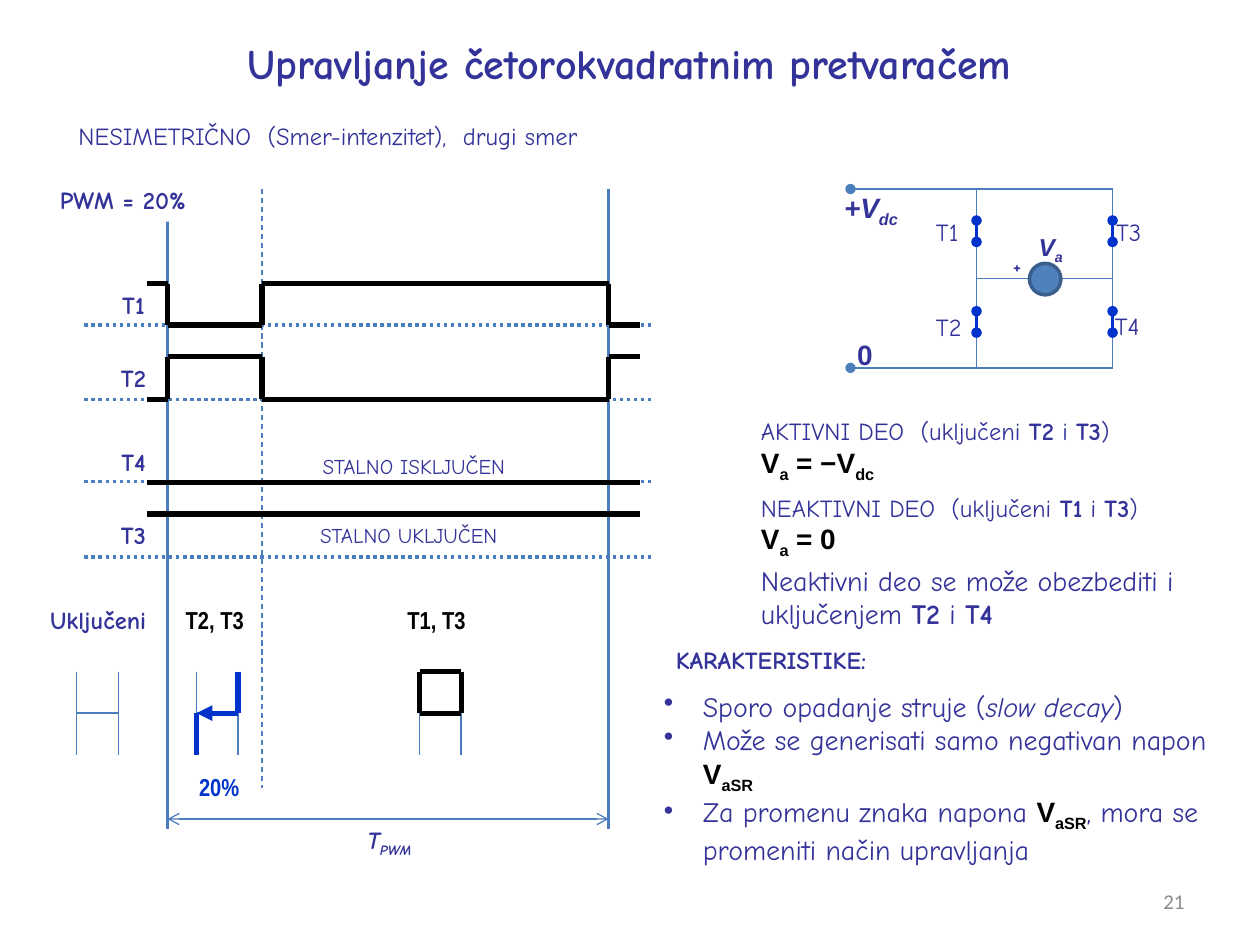
from pptx import Presentation
from pptx.dml.color import RGBColor
from pptx.enum.dml import MSO_LINE
from pptx.enum.shapes import MSO_CONNECTOR, MSO_SHAPE
from pptx.enum.text import MSO_ANCHOR, MSO_AUTO_SIZE, PP_ALIGN
from pptx.oxml.ns import qn
from pptx.util import Inches, Pt
from lxml.etree import SubElement

COLORS = {"navy": "333399", "line": "4B7EBC", "black": "000000", "blue": "0033CC",
          "motor": "4F81BD", "rim": "3A5F8C", "gray": "8C8C8C", "white": "FFFFFF"}

# name: font, colour, bold, italic, subscript
STYLES = {
    "plain": ("Comic Neue", "navy", False, False, False),
    "bold": ("Comic Neue", "navy", True, False, False),
    "slant": ("Comic Neue", "navy", False, True, False),
    "period": ("Comic Neue", "navy", True, True, False),
    "period_sub": ("Comic Neue", "navy", True, True, True),
    "volt": ("Arial", "navy", True, True, False),
    "volt_sub": ("Arial", "navy", True, True, True),
    "zero": ("Arial", "navy", True, False, False),
    "math": ("Arial", "black", True, False, False),
    "sub": ("Arial", "black", True, False, True),
    "narrow": ("Arial Narrow", "black", True, False, False),
    "duty": ("Arial Narrow", "blue", True, False, False),
    "number": ("Calibri", "gray", False, False, False),
}

TITLE = "Upravljanje četorokvadratnim pretvaračem"

LABELS = [
    ("NESIMETRIČNO  (Smer-intenzitet),  drugi smer", "plain", 14, (0.25, 0.91, 4.71, 0.34)),
    ("PWM = 20%", "bold", 14, (0.29, 1.42, 1.37, 0.34)),
    ("Uključeni", "bold", 14, (0.25, 4.75, 1.06, 0.34)),
    ("T2, T3", "narrow", 14, (1.37, 4.75, 0.67, 0.34)),
    ("T1, T3", "narrow", 14, (3.13, 4.75, 0.67, 0.34)),
    ("20%", "duty", 14, (1.48, 6.08, 0.52, 0.34)),
    ("STALNO ISKLJUČEN", "plain", 12, (2.31, 3.55, 1.95, 0.3)),
    ("STALNO UKLJUČEN", "plain", 12, (2.31, 4.1, 1.87, 0.3)),
    ("KARAKTERISTIKE:", "bold", 14, (5.08, 5.07, 2.08, 0.34)),
    ("0", "zero", 16, (6.7, 2.63, 0.33, 0.37)),
]
SYMBOLS = [
    ([("T", "period"), ("PWM ", "period_sub")], 14, (2.75, 6.5, 0.72, 0.34)),
    ([("+V", "volt"), ("dc ", "volt_sub")], 16, (6.58, 1.46, 0.7, 0.37)),
    ([("V", "volt"), ("a ", "volt_sub")], 14, (8.13, 1.79, 0.45, 0.34)),
]
SWITCH_NAMES = [("T1", 14, 7.33, 1.67), ("T2", 14, 7.33, 2.43), ("T3", 14, 8.76, 1.67),
                ("T4", 14, 8.75, 2.42)]

NOTES = [
    ((5.94, 3.25, 3.39, 0.61), [
        (14, [("AKTIVNI DEO  (uključeni ", "plain"), ("T2", "bold"), (" i ", "plain"),
              ("T3", "bold"), (")", "plain")]),
        (16, [("V", "math"), ("a", "sub"), (" = −V", "math"), ("dc", "sub")])]),
    ((5.94, 3.86, 3.68, 0.61), [
        (14, [("NEAKTIVNI DEO  (uključeni ", "plain"), ("T1", "bold"), (" i ", "plain"),
              ("T3", "bold"), (")", "plain")]),
        (16, [("V", "math"), ("a", "sub"), (" = 0", "math")])]),
    ((5.94, 4.42, 3.84, 0.64), [
        (16, [("Neaktivni deo se može obezbediti i", "plain")]),
        (16, [("uključenjem ", "plain"), ("T2", "bold"), (" i ", "plain"), ("T4", "bold")])]),
]
FEATURES = [
    (16, [("Sporo opadanje struje (", "plain"), ("slow decay", "slant"), (")", "plain")]),
    (16, [("Može se generisati samo negativan napon ", "plain"), ("V", "math"), ("aSR", "sub")]),
    (16, [("Za promenu znaka napona ", "plain"), ("V", "math"), ("aSR", "sub"),
          (", mora se promeniti način upravljanja", "plain")]),
]

# name, label top, axis height, level in each interval
EDGES = [1.17, 1.33, 2.08, 4.83, 5.08]
SIGNALS = [
    ("T1", 2.25, 2.58, [2.25, 2.58, 2.25, 2.58]),
    ("T2", 2.83, 3.17, [3.17, 2.83, 3.17, 2.83]),
    ("T4", 3.5, 3.82, [3.83] * 4),
    ("T3", 4.08, 4.42, [4.08] * 4),
]
BRIDGE_LEFTS = [0.61, 1.56, 3.33]
BRIDGE_TOP, BRIDGE_SIDE = 5.33, 0.33
RAILS, LEGS = (1.5, 2.92), (7.75, 8.83)


def rgb(name):
    return RGBColor.from_string(COLORS[name])


def add_line(s, x1, y1, x2, y2, color="line", width=0.75, dash=None, head=None, tail=None):
    c = s.shapes.add_connector(MSO_CONNECTOR.STRAIGHT, *map(Inches, (x1, y1, x2, y2)))
    c.line.color.rgb = rgb(color)
    c.line.width = Pt(width)
    if dash:
        c.line.dash_style = dash
    ln = c.line._get_or_add_ln()
    for tag, kind in (("a:headEnd", head), ("a:tailEnd", tail)):
        if kind:
            SubElement(ln, qn(tag), type=kind)
    SubElement(c._element.spPr, qn("a:effectLst"))


def style_font(font, style, size):
    font.name, color, font.bold, font.italic, _ = STYLES[style]
    font.size = Pt(size)
    font.color.rgb = rgb(color)


def fill_text(tf, paras, align=PP_ALIGN.LEFT, wrap=False):
    tf.word_wrap = wrap
    tf.auto_size = MSO_AUTO_SIZE.NONE
    for i, (size, runs) in enumerate(paras):
        p = tf.add_paragraph() if i else tf.paragraphs[0]
        p.alignment = align
        base = runs[0][1]
        style_font(p.font, base, size)
        for text, style in runs:
            r = p.add_run()
            r.text = text
            if len(runs) > 1:
                style_font(r.font, style, size)
            if STYLES[style][4]:
                r._r.get_or_add_rPr().set("baseline", "-25000")


def add_text(s, box, paras, align=PP_ALIGN.LEFT, wrap=False):
    tb = s.shapes.add_textbox(*map(Inches, box))
    fill_text(tb.text_frame, paras, align, wrap)
    return tb


def draw_timing(s):
    for _, _, axis, _ in SIGNALS:
        add_line(s, 0.67, axis, 5.17, axis, width=0, dash=MSO_LINE.ROUND_DOT)
    add_line(s, 2.08, 1.5, 2.08, 6.25, dash=MSO_LINE.DASH)
    for x in (EDGES[1], EDGES[3]):
        add_line(s, x, 1.5, x, 6.58, width=1.25)
    add_line(s, EDGES[1], 6.5, EDGES[3], 6.5, head="arrow", tail="arrow")
    for name, top, _, levels in SIGNALS:
        for x1, x2, y in zip(EDGES, EDGES[1:], levels):
            add_line(s, x1, y, x2, y, "black", 3)
        for x, y1, y2 in zip(EDGES[1:], levels, levels[1:]):
            if y1 != y2:
                add_line(s, x, y1, x, y2, "black", 3)
        add_text(s, (0.83, top, 0.46, 0.34), [(14, [(name, "bold")])], PP_ALIGN.CENTER)


def draw_bridges(s):
    top, mid, low = (BRIDGE_TOP + i * BRIDGE_SIDE for i in range(3))
    for left in BRIDGE_LEFTS:
        right = left + BRIDGE_SIDE
        add_line(s, left, top, left, low)
        add_line(s, right, top, right, low)
        add_line(s, left, mid, right, mid)
    for x in (left, right):
        add_line(s, x, top, x, mid, "black", 3)
    for y in (top, mid):
        add_line(s, left, y, right, y, "black", 3)
    left = BRIDGE_LEFTS[1]
    right = left + BRIDGE_SIDE
    add_line(s, right, top, right, mid, "blue", 3)
    add_line(s, left, mid, left, low, "blue", 3)
    add_line(s, left, mid, right, mid, "blue", 3, head="triangle")


def draw_circuit(s):
    for y in RAILS:
        add_line(s, 6.75, y, LEGS[1], y, head="oval")
    for x in LEGS:
        add_line(s, x, RAILS[0], x, RAILS[1])
    add_line(s, LEGS[0], 2.21, LEGS[1], 2.21)
    motor = s.shapes.add_shape(MSO_SHAPE.OVAL, *map(Inches, (8.17, 2.09, 0.25, 0.25)))
    motor.shadow.inherit = False
    motor.fill.solid()
    motor.fill.fore_color.rgb = rgb("motor")
    motor.line.color.rgb = rgb("rim")
    motor.line.width = Pt(2)
    for name, size, x, y in SWITCH_NAMES:
        add_text(s, (x, y, 0.58, 0.41), [(size, [(name, "plain")])], wrap=True)
    add_text(s, (7.94, 1.97, 0.58, 0.41), [(11, [("+", "bold")])], wrap=True)
    for x in LEGS:
        for y in (1.75, 2.47):
            add_line(s, x, y, x, y + 0.17, "blue", 2, head="oval", tail="oval")


def main():
    """Build the slide on driving a four-quadrant converter."""
    prs = Presentation()
    prs.slide_width, prs.slide_height = Inches(10), Inches(7.5)
    s = prs.slides.add_slide(prs.slide_layouts[5])
    title = s.shapes.title
    title.left, title.top, title.width, title.height = map(Inches, (1.37, 0.25, 7.25, 0.5))
    fill_text(title.text_frame, [(24, [(TITLE, "bold")])], PP_ALIGN.CENTER)
    title.text_frame.vertical_anchor = MSO_ANCHOR.TOP

    draw_timing(s)
    draw_bridges(s)
    draw_circuit(s)
    for text, style, size, box in LABELS:
        tb = add_text(s, box, [(size, [(text, style)])], PP_ALIGN.CENTER)
        if text.startswith("PWM"):
            tb.fill.solid()
            tb.fill.fore_color.rgb = rgb("white")
    for runs, size, box in SYMBOLS:
        add_text(s, box, [(size, runs)], PP_ALIGN.CENTER)
    for box, paras in NOTES:
        add_text(s, box, paras)
    features = add_text(s, (5.17, 5.42, 4.61, 1.45), FEATURES, wrap=True)
    for p in features.text_frame.paragraphs:
        pPr = p._p.get_or_add_pPr()
        pPr.set("marL", str(Inches(0.31)))
        pPr.set("indent", str(Inches(-0.31)))
        bullet = pPr.makeelement(qn("a:buChar"), {"char": "•"})
        pPr.insert(0, bullet)
    number = add_text(s, (7.17, 6.95, 2.33, 0.4), [(12, [("21", "number")])], PP_ALIGN.RIGHT)
    number.text_frame.vertical_anchor = MSO_ANCHOR.MIDDLE
    prs.save("out.pptx")


if __name__ == "__main__":
    main()
